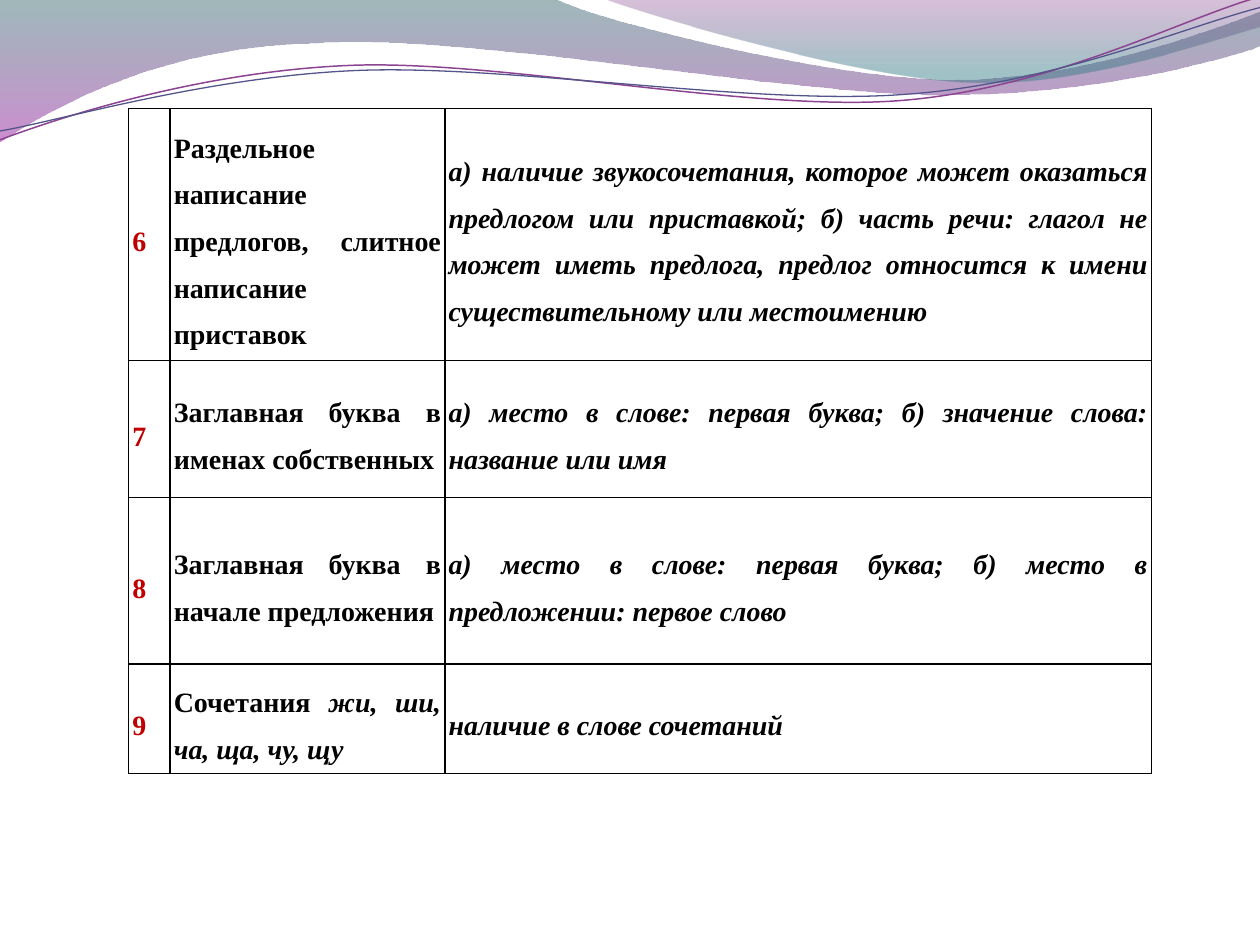
import pptx
import pptx.util
import pptx.dml.color
import pptx.enum.text
import pptx.oxml.ns
import lxml.etree

Inches, Pt = pptx.util.Inches, pptx.util.Pt
qn = pptx.oxml.ns.qn

THEME = {
    "font": "Times New Roman", "size": 16, "lead": 1.5,
    "ink": "000000", "mark": "C00000",
    "teal": "2D6368", "pink": "A530A9",
    "plum": "7F2F82", "sea": "2F7B82",
    "rose": "8D4490", "blue": "53548A",
}

# Number, rule (upright part, slanted part), signs of the rule
RULES = [
    ("6", ("Раздельное написание предлогов, слитное написание приставок", ""),
     "а) наличие звукосочетания, которое может оказаться предлогом или "
     "приставкой; б) часть речи: глагол не может иметь предлога, предлог "
     "относится к имени существительному или местоимению"),
    ("7", ("Заглавная буква в именах собственных", ""),
     "а) место в слове: первая буква; б) значение слова: название или имя"),
    ("8", ("Заглавная буква в начале предложения", ""),
     "а) место в слове: первая буква; б) место в предложении: первое слово"),
    ("9", ("Сочетания ", "жи, ши, ча, ща, чу, щу"),
     "наличие в слове сочетаний"),
]
LEFT, TOP = 1.02, 0.86
COLS = [0.33, 2.18, 5.61]
ROWS = [2, 1.09, 1.32, 0.87]

# A step of one point is a line, a step of three points is a Bezier curve.
# Gradient stops: place, colour, opacity in percent.
WAVES = [
    {"start": (0, 0),
     "steps": [[(4.4, -0.01)],
               [(4.76, 0.17), (6.64, 0.63), (7.58, 0.63)],
               [(8.53, 0.63), (9.58, 0.26), (10, 0.09)],
               [(10.01, 0.36)],
               [(9.83, 0.44), (8.7, 0.76), (7.46, 0.75)],
               [(6.22, 0.75), (3.82, 0.28), (2.57, 0.34)],
               [(1.29, 0.36), (0.46, 0.83), (-0.01, 1.13)]],
     "stops": [(0, "teal", 45), (1, "pink", 55)]},
    {"start": (4.79, -0.01),
     "steps": [[(5.09, 0.11), (6.82, 0.62), (7.69, 0.65)],
               [(8.56, 0.69), (9.61, 0.32), (10, 0.21)],
               [(10, 0)]],
     "stops": [(0, "plum", 30), (0.8, "sea", 45)]},
    {"start": (0, 1.11),
     "steps": [[(0.48, 0.93), (1.58, 0.57), (2.77, 0.52)],
               [(3.95, 0.47), (5.93, 0.89), (7.13, 0.8)],
               [(8.33, 0.71), (9.38, 0.15), (9.98, -0.02)]],
     "line": ("rose", 0.85)},
    {"start": (0, 1.04),
     "steps": [[(0.47, 0.96), (1.64, 0.61), (2.83, 0.56)],
               [(4.03, 0.51), (5.97, 0.84), (7.17, 0.75)],
               [(8.36, 0.67), (9.41, 0.21), (10, 0.06)]],
     "line": ("blue", 0.75)},
]


def color(name):
    return pptx.dml.color.RGBColor.from_string(THEME[name])


def bend(shape, steps):
    """Join each three line segments of a curved step into one Bezier curve."""
    lines = iter(shape.element.xpath(".//a:path/a:lnTo"))
    for step in steps:
        group = [next(lines) for _ in step]
        if len(group) == 3:
            first, *rest = group
            first.tag = qn("a:cubicBezTo")
            for line in rest:
                first.append(line[0])
                line.getparent().remove(line)


def shade(shape, stops):
    """Fill from top to bottom with see-through colours."""
    shape.fill.gradient()
    shape.fill.gradient_angle = 270
    for stop, (place, name, _) in zip(shape.fill.gradient_stops, stops):
        stop.position = place
        stop.color.rgb = color(name)
    tints = shape.element.xpath(".//a:gs/a:srgbClr")
    for tint, (_, _, alpha) in zip(tints, stops):
        lxml.etree.SubElement(tint, qn("a:alpha")).set("val", str(alpha * 1000))


def draw(slide, wave):
    steps = wave["steps"]
    dots = [wave["start"]] + [dot for step in steps for dot in step]
    dots = [(round(x * 100), round(y * 100)) for x, y in dots]
    pen = slide.shapes.build_freeform(*dots[0], scale=Inches(0.01))
    pen.add_line_segments(dots[1:], close="stops" in wave)
    shape = pen.convert_to_shape()
    bend(shape, steps)
    shape.shadow.inherit = False
    if "stops" in wave:
        shade(shape, wave["stops"])
        shape.line.fill.background()
    else:
        name, width = wave["line"]
        shape.fill.background()
        shape.line.color.rgb = color(name)
        shape.line.width = Pt(width)


def write(para, text, ink="ink", slant=False):
    run = para.add_run()
    run.text = text
    font = run.font
    font.name, font.size = THEME["font"], Pt(THEME["size"])
    font.bold, font.italic = True, slant
    font.color.rgb = color(ink)


def frame(cell):
    """Give a cell a thin line on each side and no fill."""
    props = cell._tc.get_or_add_tcPr()
    for side in ("lnL", "lnR", "lnT", "lnB"):
        line = lxml.etree.SubElement(props, qn("a:" + side), w=str(Pt(1)))
        fill = lxml.etree.SubElement(line, qn("a:solidFill"))
        lxml.etree.SubElement(fill, qn("a:srgbClr"), val=THEME["ink"])
    cell.fill.background()


def setup(cell):
    """Format a cell and return its paragraph."""
    frame(cell)
    cell.vertical_anchor = pptx.enum.text.MSO_ANCHOR.MIDDLE
    cell.margin_left = cell.margin_right = Inches(0.03)
    cell.margin_top = cell.margin_bottom = 0
    para = cell.text_frame.paragraphs[0]
    para.alignment = pptx.enum.text.PP_ALIGN.JUSTIFY
    para.line_spacing = THEME["lead"]
    return para


def fill_table(slide):
    box = [Inches(n) for n in (LEFT, TOP, sum(COLS), sum(ROWS))]
    table = slide.shapes.add_table(len(ROWS), len(COLS), *box).table
    table.first_row = table.horz_banding = False
    for col, width in zip(table.columns, COLS):
        col.width = Inches(width)
    for row, height, (mark, (plain, slant), signs) in zip(
            table.rows, ROWS, RULES):
        row.height = Inches(height)
        first, second, third = [setup(cell) for cell in row.cells]
        write(first, mark, ink="mark")
        write(second, plain)
        if slant:
            write(second, slant, slant=True)
        write(third, signs, slant=True)


def main():
    deck = pptx.Presentation()
    deck.slide_width, deck.slide_height = Inches(10), Inches(7.5)
    slide = deck.slides.add_slide(deck.slide_layouts[6])
    for wave in WAVES:
        draw(slide, wave)
    fill_table(slide)
    deck.save("out.pptx")


if __name__ == "__main__":
    main()
